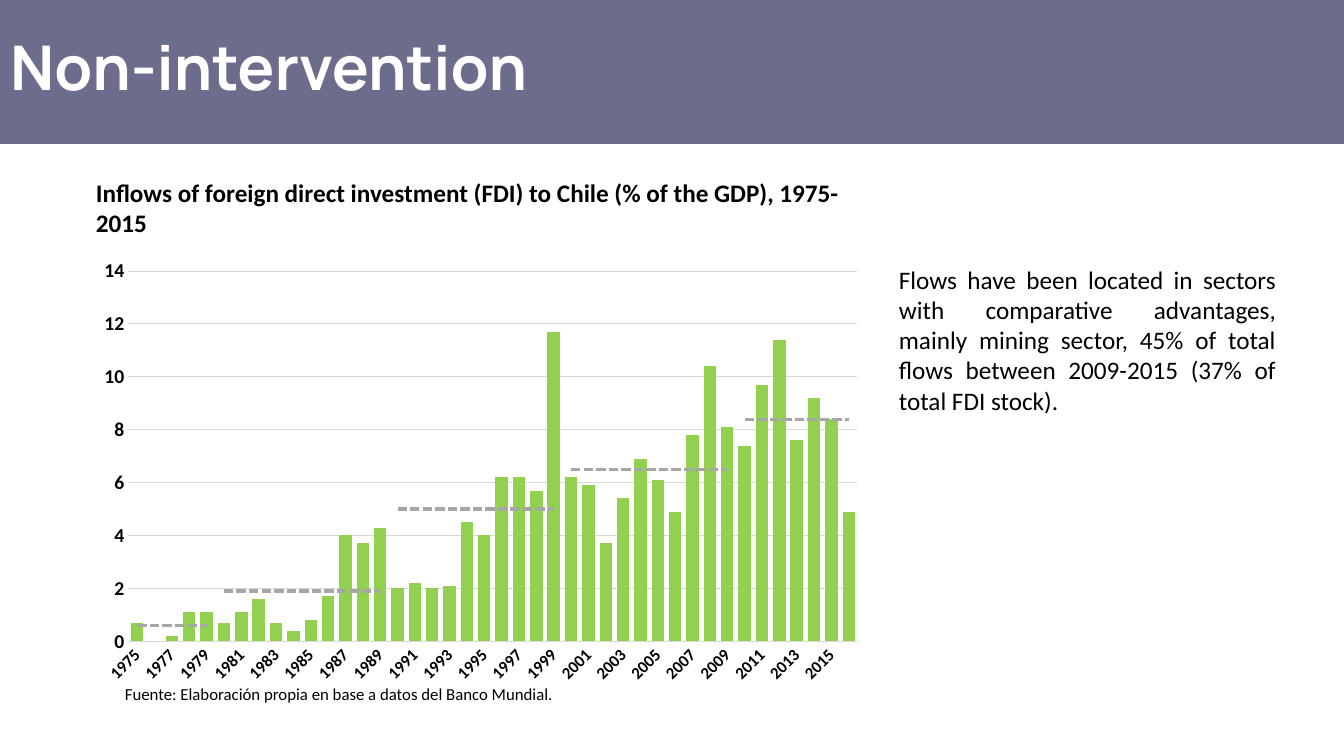
"""Build the slide on foreign direct investment flows to Chile."""
from lxml import etree
from pptx import Presentation, util as u
from pptx.chart.data import CategoryChartData
from pptx.dml.color import RGBColor
from pptx.enum import chart as charts, dml, shapes, text
from pptx.oxml import parse_xml
from pptx.oxml.ns import nsdecls, qn

COLORS = {
    "banner": "6C6C8C", "white": "FFFFFF", "black": "000000",
    "inflow": "92D050", "average": "A6A6A6", "grid": "D9D9D9",
}
YEARS = range(1975, 2017)
INFLOWS = [
    0.7, 0, 0.2, 1.1, 1.1, 0.7, 1.1, 1.6, 0.7, 0.4, 0.8, 1.7, 4, 3.7,
    4.3, 2, 2.2, 2, 2.1, 4.5, 4, 6.2, 6.2, 5.7, 11.7, 6.2, 5.9, 3.7,
    5.4, 6.9, 6.1, 4.9, 7.8, 10.4, 8.1, 7.4, 9.7, 11.4, 7.6, 9.2, 8.4, 4.9,
]
AVERAGES = [
    (1975, 1979, 0.6), (1980, 1989, 1.9), (1990, 1999, 5),
    (2000, 2009, 6.5), (2010, 2016, 8.4),
]
PLOT_AREA = {"x": 0.053, "y": 0.026, "w": 0.909, "h": 0.833}
SCALE = 914400 / 100.8


def px(*lengths):
    return [u.Emu(round(length * SCALE)) for length in lengths]


def style(font, size, color="black", bold=False, name="Calibri"):
    font.name, font.size, font.bold = name, u.Pt(size), bold
    font.color.rgb = RGBColor.from_string(COLORS[color])


prs = Presentation()
prs.slide_width, prs.slide_height = px(1344, 756)
slide = prs.slides.add_slide(prs.slide_layouts[5])

banner = slide.shapes.add_shape(shapes.MSO_SHAPE.RECTANGLE, *px(0, 0, 1344, 144))
banner.shadow.inherit = False
banner.fill.solid()
banner.fill.fore_color.rgb = RGBColor.from_string(COLORS["banner"])
banner.line.fill.background()

title = slide.shapes.title
title._element.addprevious(banner._element)
title.left, title.top, title.width, title.height = px(0, -2, 1227, 146)
title.text_frame.text = "Non-intervention"
title.text_frame.vertical_anchor = text.MSO_ANCHOR.MIDDLE
heading = title.text_frame.paragraphs[0]
heading.alignment = text.PP_ALIGN.LEFT
heading.line_spacing = 0.9
style(heading.runs[0].font, 44, "white", True, "Manrope")

fdi = CategoryChartData()
fdi.categories = [str(year) for year in YEARS]
fdi.add_series("Series 1", INFLOWS)
for number, (first, last, average) in enumerate(AVERAGES, 2):
    fdi.add_series(
        f"Series {number}",
        [average if first <= year <= last else None for year in YEARS],
    )
chart = slide.shapes.add_chart(
    charts.XL_CHART_TYPE.COLUMN_CLUSTERED, *px(86, 259, 802, 445), fdi
).chart
chart.has_legend = False
chart.has_title = False
style(chart.font, 10)

bars = chart.plots[0]
bars.gap_width = 40
bars.vary_by_categories = False
inflow_fill = bars.series[0].format.fill
inflow_fill.solid()
inflow_fill.fore_color.rgb = RGBColor.from_string(COLORS["inflow"])

bar_xml = bars._element
line_xml = parse_xml(
    f'<c:lineChart {nsdecls("c")}><c:grouping val="standard"/>'
    '<c:varyColors val="0"/></c:lineChart>'
)
for series_xml in bar_xml.findall(qn("c:ser"))[1:]:
    for bar_only in series_xml.findall(qn("c:invertIfNegative")):
        series_xml.remove(bar_only)
    line_xml.append(series_xml)
etree.SubElement(line_xml, qn("c:marker")).set("val", "1")
for axis_id in bar_xml.findall(qn("c:axId")):
    etree.SubElement(line_xml, qn("c:axId")).set("val", axis_id.get("val"))
bar_xml.addnext(line_xml)

for decade in chart.plots[1].series:
    decade.smooth = False
    decade.marker.style = charts.XL_MARKER_STYLE.NONE
    decade.format.line.width = u.Pt(2.25)
    decade.format.line.color.rgb = RGBColor.from_string(COLORS["average"])
    decade.format.line.dash_style = dml.MSO_LINE.SQUARE_DOT

plot_xml = bar_xml.getparent()
for old_layout in plot_xml.findall(qn("c:layout")):
    plot_xml.remove(old_layout)
modes = "".join(f'<c:{side}Mode val="edge"/>' for side in "xy")
sizes = "".join(f'<c:{side} val="{share}"/>' for side, share in PLOT_AREA.items())
plot_xml.insert(0, parse_xml(
    f'<c:layout {nsdecls("c")}><c:manualLayout><c:layoutTarget val="inner"/>'
    f"{modes}{sizes}</c:manualLayout></c:layout>"
))

years, percent = chart.category_axis, chart.value_axis
for axis, size in ((years, 12), (percent, 14)):
    axis.major_tick_mark = axis.minor_tick_mark = charts.XL_TICK_MARK.NONE
    style(axis.tick_labels.font, size, bold=True)
percent.minimum_scale, percent.maximum_scale, percent.major_unit = 0, 14, 2
percent.tick_labels.number_format = "General"
percent.tick_labels.number_format_is_linked = False
percent.has_major_gridlines = True
percent.format.line.fill.background()
for rule in (years.format.line, percent.major_gridlines.format.line):
    rule.width = u.Pt(0.75)
    rule.color.rgb = RGBColor.from_string(COLORS["grid"])
years_xml = years._element
years_xml.find(qn("c:txPr")).find(qn("a:bodyPr")).set("rot", "-2700000")
label_step = parse_xml(f'<c:tickLblSkip {nsdecls("c")} val="2"/>')
years_xml.find(qn("c:noMultiLvlLbl")).addprevious(label_step)

CAPTIONS = [
    ((86, 172, 802, 72), 18, True, True, text.PP_ALIGN.LEFT,
     "Inflows of foreign direct investment (FDI) to Chile (% of the GDP), 1975-2015"),
    ((889, 259, 397, 163), 18, False, True, text.PP_ALIGN.JUSTIFY,
     "Flows have been located in sectors with comparative advantages, mainly mining "
     "sector, 45% of total flows between 2009-2015 (37% of total FDI stock)."),
    ((115, 677, 457, 31), 12, False, False, text.PP_ALIGN.JUSTIFY,
     "Fuente: Elaboración propia en base a datos del Banco Mundial."),
]
for place, size, bold, wraps, alignment, wording in CAPTIONS:
    frame = slide.shapes.add_textbox(*px(*place)).text_frame
    frame.word_wrap = wraps
    frame.auto_size = text.MSO_AUTO_SIZE.SHAPE_TO_FIT_TEXT
    frame.text = wording
    caption = frame.paragraphs[0]
    caption.alignment = alignment
    style(caption.runs[0].font, size, bold=bold)
    if not wraps:
        caption.line_spacing = 1.07
        caption.space_after = u.Pt(8)

prs.save("out.pptx")
